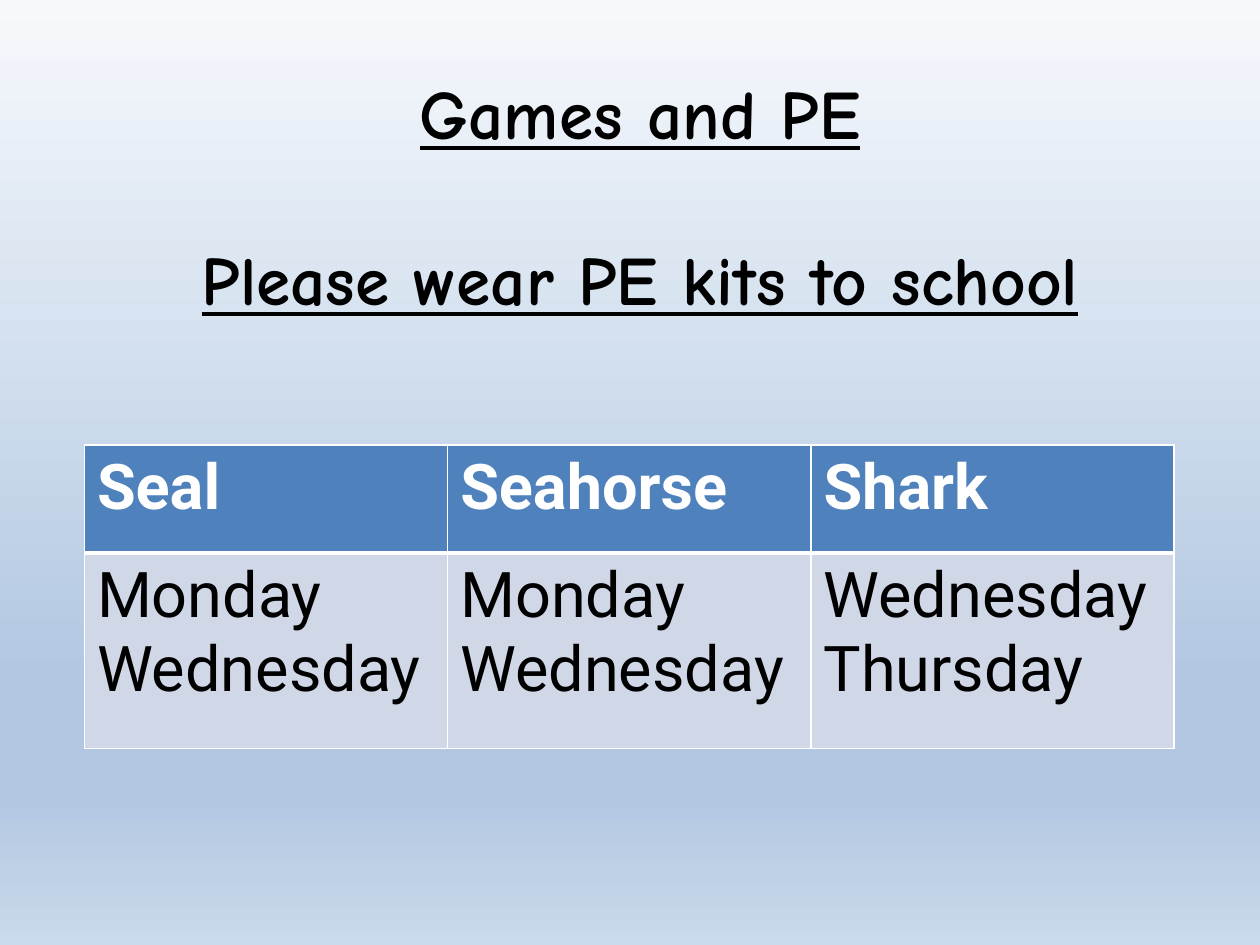
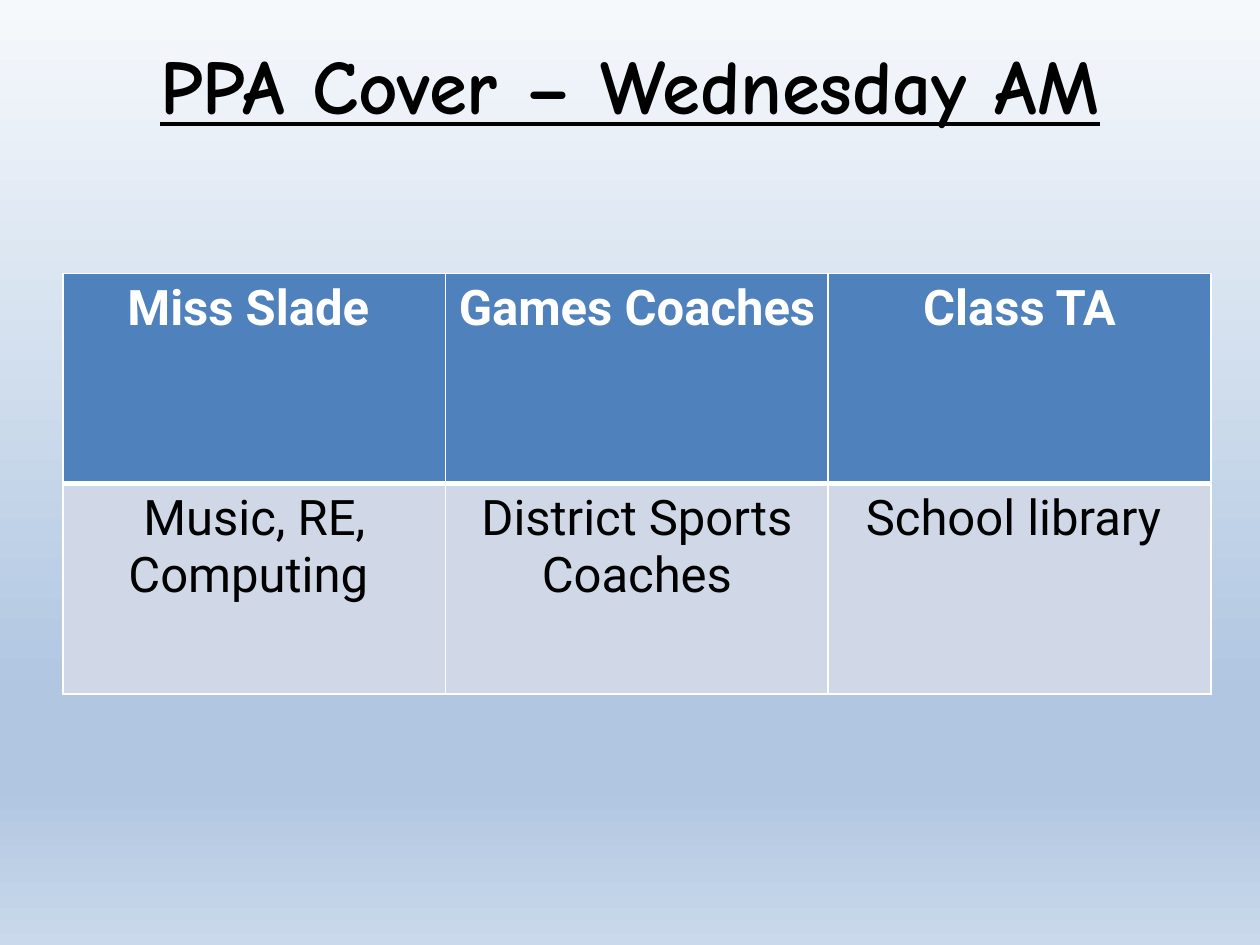
"""Build two school timetable slides, each with a title and a three-column table."""
from lxml.etree import SubElement
from pptx import Presentation
from pptx.dml.color import RGBColor
from pptx.enum.text import MSO_ANCHOR, MSO_AUTO_SIZE, PP_ALIGN
from pptx.oxml.ns import qn
from pptx.util import Inches, Pt

COLORS = {"ink": "000000", "white": "FFFFFF", "header": "4F81BD", "body": "D0D8E8"}
BACKGROUND_STOPS = [(0, "F6F9FC"), (74, "B0C6E1"), (83, "B0C6E1"), (100, "CAD9EB")]
TITLE_FONT = {"name": "Comic Neue", "bold": True, "underline": True}
TITLE_SIZE = (9, 1.25)
ROW_STYLES = [
    {"fill": "header", "color": "white", "bold": True, "borders": {"L": 1, "R": 1, "T": 1, "B": 3}},
    {"fill": "body", "color": "ink", "bold": False, "borders": {"L": 1, "R": 1, "T": 3, "B": 1}},
]
SLIDES = [
    {
        "title": ["Games and PE", "Please wear PE kits to school"],
        "title_at": (0.58, 0.92), "title_points": 39.6, "title_gap": 47.4,
        "table_at": (0.67, 3.53), "table_width": 8.65, "row_heights": [0.86, 1.55],
        "points": 36, "align": PP_ALIGN.LEFT,
        "rows": [
            ["Seal", "Seahorse", "Shark"],
            ["Monday\nWednesday", "Monday\nWednesday", "Wednesday\nThursday"],
        ],
    },
    {
        "title": ["PPA Cover – Wednesday AM"],
        "title_at": (0.5, 0.04), "title_points": 44, "title_gap": 0,
        "table_at": (0.5, 2.17), "table_width": 9.11, "row_heights": [1.67, 1.67],
        "points": 28, "align": PP_ALIGN.CENTER,
        "rows": [
            ["Miss Slade ", "Games Coaches ", "Class TA"],
            ["Music, RE, Computing ", "District Sports Coaches", "School library "],
        ],
    },
]


def set_format(font, color, points, **values):
    font.color.rgb = RGBColor.from_string(COLORS[color])
    font.size = Pt(points)
    for name, value in values.items():
        setattr(font, name, value)


def set_background(master):
    fill = master.background.fill
    fill.gradient()
    fill.gradient_angle = 270
    stops = master.element.find(".//" + qn("a:gsLst"))
    for stop in list(stops):
        stops.remove(stop)
    for position, color in BACKGROUND_STOPS:
        stop = SubElement(stops, qn("a:gs"), pos=str(position * 1000))
        SubElement(stop, qn("a:srgbClr"), val=color)


def add_title(slide, content):
    title = slide.shapes.title
    title.left, title.top = map(Inches, content["title_at"])
    title.width, title.height = map(Inches, TITLE_SIZE)
    frame = title.text_frame
    frame.text = "\n".join(content["title"])
    frame.auto_size = MSO_AUTO_SIZE.NONE
    frame.vertical_anchor = MSO_ANCHOR.MIDDLE
    for index, paragraph in enumerate(frame.paragraphs):
        paragraph.alignment = PP_ALIGN.CENTER
        paragraph.space_before = Pt(content["title_gap"] if index else 0)
        set_format(paragraph.runs[0].font, "ink", content["title_points"], **TITLE_FONT)


def style_cell(cell, text, style, content):
    properties = cell._tc.get_or_add_tcPr()
    for side, width in style["borders"].items():
        line = SubElement(properties, qn(f"a:ln{side}"), w=str(Pt(width)))
        color = SubElement(SubElement(line, qn("a:solidFill")), qn("a:srgbClr"))
        color.set("val", COLORS["white"])
    cell.fill.solid()
    cell.fill.fore_color.rgb = RGBColor.from_string(COLORS[style["fill"]])
    cell.text = text
    for paragraph in cell.text_frame.paragraphs:
        paragraph.alignment = content["align"]
        set_format(paragraph.runs[0].font, style["color"], content["points"],
                   name="Roboto", bold=style["bold"])


def add_timetable(slide, content):
    rows, heights = content["rows"], content["row_heights"]
    left, top = content["table_at"]
    frame = slide.shapes.add_table(
        len(rows), len(rows[0]), Inches(left), Inches(top),
        Inches(content["table_width"]), Inches(sum(heights)))
    table = frame.table
    for row_index, (texts, height, style) in enumerate(zip(rows, heights, ROW_STYLES)):
        table.rows[row_index].height = Inches(height)
        for column_index, text in enumerate(texts):
            style_cell(table.cell(row_index, column_index), text, style, content)


def main():
    presentation = Presentation()
    presentation.slide_width, presentation.slide_height = Inches(10), Inches(7.5)
    set_background(presentation.slide_master)
    for content in SLIDES:
        slide = presentation.slides.add_slide(presentation.slide_layouts[5])
        add_title(slide, content)
        add_timetable(slide, content)
    presentation.save("out.pptx")


if __name__ == "__main__":
    main()
